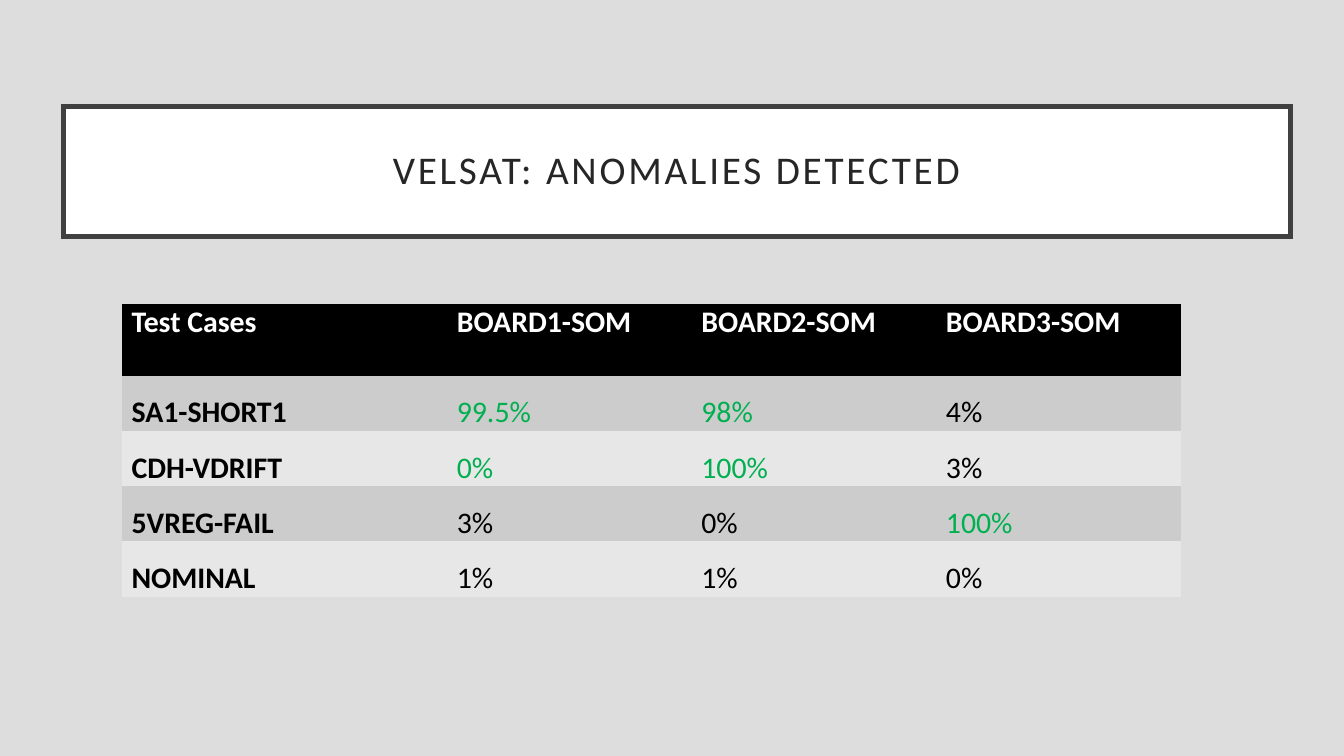
from dataclasses import dataclass

from lxml import etree
from pptx import Presentation
from pptx import util as u
from pptx.dml.color import RGBColor
from pptx.enum import text
from pptx.oxml import ns


@dataclass(frozen=True)
class Theme:
    font: str = "Calibri"
    title_size: float = 21
    table_size: float = 16
    background: str = "DDDDDD"
    panel: str = "FFFFFF"
    border: str = "404040"
    title: str = "262626"
    header: str = "000000"
    header_text: str = "FFFFFF"
    body_text: str = "000000"
    detected: str = "00B050"
    bands: tuple = ("CCCCCC", "E7E7E7")


WIDTH = 10
HEIGHT = WIDTH * 9 / 16
HEADINGS = ["Test Cases", "BOARD1-SOM", "BOARD2-SOM", "BOARD3-SOM"]
RESULTS = [
    ["SA1-SHORT1", "99.5%", "98%", "4%"],
    ["CDH-VDRIFT", "0%", "100%", "3%"],
    ["5VREG-FAIL", "3%", "0%", "100%"],
    ["NOMINAL", "1%", "1%", "0%"],
]
# Result row and column of each highlighted value
DETECTED = {(0, 1), (0, 2), (1, 1), (1, 2), (2, 3)}


def paint(fill, color):
    fill.solid()
    fill.fore_color.rgb = RGBColor.from_string(color)


def hide_borders(cell):
    """Give a table cell four invisible borders, ahead of its fill."""
    properties = cell._tc.get_or_add_tcPr()
    for position, side in enumerate("LRTB"):
        border = etree.Element(ns.qn(f"a:ln{side}"), w="0")
        etree.SubElement(border, ns.qn("a:noFill"))
        properties.insert(position, border)


def write(frame, words, *, font, size, color, bold=False, align=None,
          line_spacing=1.0, tracking=0):
    """Fill a text frame with one formatted paragraph."""
    para = frame.paragraphs[0]
    para.alignment = align
    para.line_spacing = line_spacing
    span = para.add_run()
    span.text = words
    span.font.name = font
    span.font.size = u.Pt(size)
    span.font.bold = bold
    span.font.color.rgb = RGBColor.from_string(color)
    if tracking:
        span.font._element.set("spc", str(int(tracking * 100)))


class SlideBuilder:
    """Places elements by their shares of the page size."""

    def __init__(self, deck, theme):
        self.deck, self.theme = deck, theme
        self.page = deck.slides.add_slide(deck.slide_layouts[5])
        paint(self.page.background.fill, theme.background)

    def across(self, share):
        return round(self.deck.slide_width * share)

    def down(self, share):
        return round(self.deck.slide_height * share)

    def title(self, words, left, top, width, height):
        box = self.page.shapes.title
        box.left, box.top = self.across(left), self.down(top)
        box.width, box.height = self.across(width), self.down(height)
        paint(box.fill, self.theme.panel)
        paint(box.line.fill, self.theme.border)
        box.line.width = u.Pt(2.5)
        etree.SubElement(box.line._ln, ns.qn("a:miter"), lim="800000")
        frame = box.text_frame
        frame.word_wrap = True
        frame.auto_size = text.MSO_AUTO_SIZE.NONE
        frame.vertical_anchor = text.MSO_ANCHOR.MIDDLE
        for side in ("left", "top", "right", "bottom"):
            setattr(frame, f"margin_{side}", u.Inches(0.2))
        write(frame, words, font=self.theme.font, size=self.theme.title_size,
              color=self.theme.title, align=text.PP_ALIGN.CENTER,
              line_spacing=0.9, tracking=1.5)

    def cell(self, cell, words, fill, **style):
        paint(cell.fill, fill)
        hide_borders(cell)
        cell.margin_left = cell.margin_right = u.Inches(0.07)
        cell.margin_top = cell.margin_bottom = 0
        write(cell.text_frame, words, font=self.theme.font,
              size=self.theme.table_size, align=text.PP_ALIGN.JUSTIFY, **style)

    def table(self, headings, results, detected, left, top, columns, rows):
        theme = self.theme
        table = self.page.shapes.add_table(
            len(rows), len(columns), self.across(left), self.down(top),
            self.across(sum(columns)), self.down(sum(rows))).table
        for column, share in zip(table.columns, columns):
            column.width = self.across(share)
        for row, share in zip(table.rows, rows):
            row.height = self.down(share)

        # Header row
        for c, words in enumerate(headings):
            self.cell(table.cell(0, c), words, theme.header,
                      color=theme.header_text, bold=True)

        # Banded result rows
        for r, values in enumerate(results):
            for c, words in enumerate(values):
                color = theme.detected if (r, c) in detected else theme.body_text
                self.cell(table.cell(r + 1, c), words,
                          theme.bands[r % len(theme.bands)],
                          color=color, bold=c == 0, line_spacing=1.5)


def main():
    deck = Presentation()
    deck.slide_width, deck.slide_height = u.Inches(WIDTH), u.Inches(HEIGHT)
    slide = SlideBuilder(deck, Theme())

    # Title panel
    slide.title("VELSAT: ANOMALIES DETECTED", left=0.47 / WIDTH,
                top=0.79 / HEIGHT, width=9.13 / WIDTH, height=0.97 / HEIGHT)

    # Detection rates by test case and board
    slide.table(HEADINGS, RESULTS, DETECTED, left=0.91 / WIDTH,
                top=2.26 / HEIGHT,
                columns=[2.42 / WIDTH] + [1.82 / WIDTH] * 3,
                rows=[0.54 / HEIGHT] + [0.41 / HEIGHT] * len(RESULTS))

    deck.save("out.pptx")


if __name__ == "__main__":
    main()
